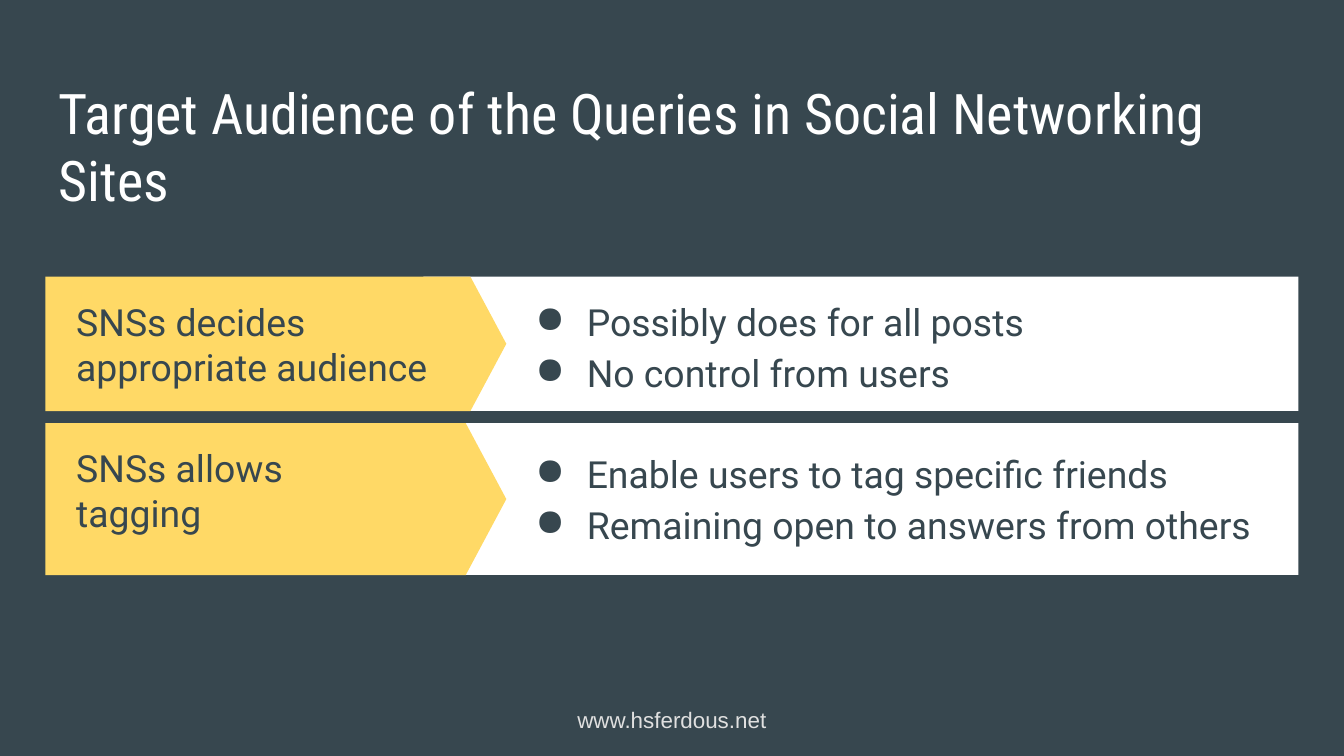
"""Build the slide on the target audience of queries in social networking sites."""
from lxml import etree
from pptx import Presentation
from pptx.dml.color import RGBColor
from pptx.enum.shapes import MSO_SHAPE
from pptx.enum.text import MSO_ANCHOR, PP_ALIGN
from pptx.oxml.ns import qn
from pptx.util import Cm, Pt

RECTANGLE, PENTAGON = MSO_SHAPE.RECTANGLE, MSO_SHAPE.PENTAGON
TOP, MIDDLE = MSO_ANCHOR.TOP, MSO_ANCHOR.MIDDLE
LEFT, CENTER = PP_ALIGN.LEFT, PP_ALIGN.CENTER

SLATE = RGBColor(0x37, 0x47, 0x4F)
YELLOW = RGBColor(0xFF, 0xD9, 0x66)
WHITE = RGBColor(0xFF, 0xFF, 0xFF)
LIGHT_GREY = RGBColor(0xE0, 0xE0, 0xE0)

TITLE = "Target Audience of the Queries in Social Networking Sites"
WEBSITE = "www.hsferdous.net"
ROWS = [
    {
        "label": "SNSs decides appropriate audience",
        "points": ["Possibly does for all posts", "No control from users"],
        "top": 5.23, "height": 2.54, "label_width": 7.75, "points_top": 5.23,
    },
    {
        "label": "SNSs allows tagging",
        "points": ["Enable users to tag specific friends",
                   "Remaining open to answers from others"],
        "top": 8.0, "height": 2.87, "label_width": 6.91, "points_top": 8.1,
    },
]

SLIDE_WIDTH, SLIDE_HEIGHT = 25.4, 14.29
MARGIN = 0.86
CONTENT_WIDTH = SLIDE_WIDTH - 2 * MARGIN
PANEL_LEFT = 8.0
ARROW_WIDTH = 8.71
POINTS_LEFT = MARGIN + ARROW_WIDTH
TEXT_HEIGHT = 2.54
INSET = 0.25


def add_bullet(paragraph):
    properties = paragraph._p.get_or_add_pPr()
    properties.set("marL", str(Cm(1.27)))
    properties.set("indent", str(-Cm(0.97)))
    color = etree.SubElement(properties, qn("a:buClr"))
    etree.SubElement(color, qn("a:srgbClr"), val=str(SLATE))
    etree.SubElement(properties, qn("a:buChar"), char="●")


def add_text(slide, lines, left, top, width, height, *, size=20, font="Roboto",
             color=SLATE, anchor=MIDDLE, align=LEFT, wrap=True, bullets=False):
    box = slide.shapes.add_textbox(Cm(left), Cm(top), Cm(width), Cm(height))
    frame = box.text_frame
    frame.word_wrap = wrap
    frame.vertical_anchor = anchor
    frame.margin_left = frame.margin_right = Cm(INSET)
    frame.margin_top = frame.margin_bottom = Cm(INSET if wrap else INSET / 2)
    for index, line in enumerate(lines):
        paragraph = frame.add_paragraph() if index else frame.paragraphs[0]
        paragraph.alignment = align
        if bullets:
            paragraph.line_spacing = 1.15
            add_bullet(paragraph)
        run = paragraph.add_run()
        run.text = line
        run.font.size = Pt(size)
        run.font.name = font
        run.font.color.rgb = color


def add_block(slide, kind, left, top, width, height, color):
    shape = slide.shapes.add_shape(kind, Cm(left), Cm(top), Cm(width), Cm(height))
    shape.shadow.inherit = False
    shape.fill.solid()
    shape.fill.fore_color.rgb = color
    shape.line.fill.background()
    return shape


def add_row(slide, row):
    top, height = row["top"], row["height"]
    panel_width = MARGIN + CONTENT_WIDTH - PANEL_LEFT
    add_block(slide, RECTANGLE, PANEL_LEFT, top, panel_width, height, WHITE)
    arrow = add_block(slide, PENTAGON, MARGIN, top, ARROW_WIDTH, height, YELLOW)
    arrow.adjustments[0] = 0.267
    add_text(slide, [row["label"]], 1.19, top, row["label_width"], TEXT_HEIGHT)
    add_text(slide, row["points"], POINTS_LEFT, row["points_top"], 14.58,
             TEXT_HEIGHT, bullets=True)


def main():
    presentation = Presentation()
    presentation.slide_width = Cm(SLIDE_WIDTH)
    presentation.slide_height = Cm(SLIDE_HEIGHT)
    slide = presentation.slides.add_slide(presentation.slide_layouts[6])
    slide.background.fill.solid()
    slide.background.fill.fore_color.rgb = SLATE

    website_width = 4.14
    add_text(slide, [WEBSITE], (SLIDE_WIDTH - website_width) / 2, 13.23,
             website_width, 0.76, size=12, font="Arial", color=LIGHT_GREY,
             anchor=TOP, align=CENTER, wrap=False)
    add_text(slide, [TITLE], MARGIN, 1.24, CONTENT_WIDTH, 1.6, size=30,
             font="Roboto Condensed", color=WHITE, anchor=TOP)
    for row in ROWS:
        add_row(slide, row)
    presentation.save("out.pptx")


if __name__ == "__main__":
    main()
